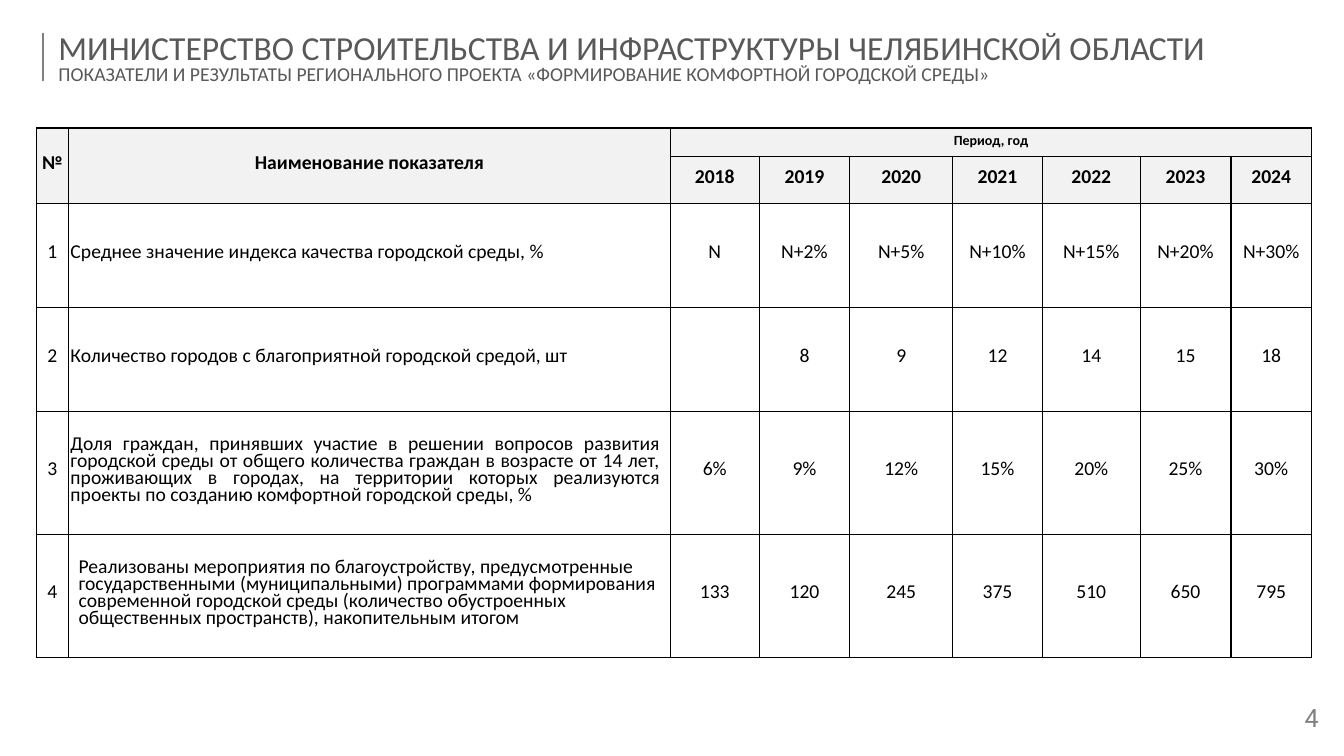
from lxml import etree
from pptx import Presentation
from pptx.dml.color import RGBColor
from pptx.enum.shapes import MSO_CONNECTOR
from pptx.enum.text import MSO_ANCHOR, MSO_AUTO_SIZE, PP_ALIGN
from pptx.oxml.ns import qn
from pptx.util import Inches, Pt

HEAD = [
    ("МИНИСТЕРСТВО СТРОИТЕЛЬСТВА И ИНФРАСТРУКТУРЫ ЧЕЛЯБИНСКОЙ ОБЛАСТИ", 24),
    ("ПОКАЗАТЕЛИ И РЕЗУЛЬТАТЫ РЕГИОНАЛЬНОГО ПРОЕКТА "
     "«ФОРМИРОВАНИЕ КОМФОРТНОЙ ГОРОДСКОЙ СРЕДЫ»", 14),
]
ROWS = [
    ["№", "Наименование показателя", "Период, год"] + [""] * 6,
    ["", "", "2018", "2019", "2020", "2021", "2022", "2023", "2024"],
    ["1", "Среднее значение индекса качества городской среды, %",
     "N", "N+2%", "N+5%", "N+10%", "N+15%", "N+20%", "N+30%"],
    ["2", "Количество городов с благоприятной городской средой, шт",
     "", "8", "9", "12", "14", "15", "18"],
    ["3", "Доля граждан, принявших участие в решении вопросов развития "
     "городской среды от общего количества граждан в возрасте от 14 лет, "
     "проживающих в городах, на территории которых реализуются проекты "
     "по созданию комфортной городской среды, %",
     "6%", "9%", "12%", "15%", "20%", "25%", "30%"],
    ["4", "Реализованы мероприятия по благоустройству, предусмотренные "
     "государственными (муниципальными) программами формирования "
     "современной городской среды (количество обустроенных "
     "общественных пространств), накопительным итогом",
     "133", "120", "245", "375", "510", "650", "795"],
]
WIDTHS = [0.32, 5.97, 0.88, 0.9, 1.02, 0.89, 0.97, 0.9, 0.8]
HEIGHTS = [0.28, 0.47, 1.03, 1.03, 1.22, 1.22]
SPANS = [((0, 0), (1, 0)), ((0, 1), (1, 1)), ((0, 2), (0, 8))]
PAGE = "4"

BLACK = RGBColor(0x00, 0x00, 0x00)
DARK = RGBColor(0x59, 0x59, 0x59)
GREY = RGBColor(0x80, 0x80, 0x80)
PALE = RGBColor(0xF2, 0xF2, 0xF2)
FONT = "Calibri"
LEFT, CENTER, JUST = PP_ALIGN.LEFT, PP_ALIGN.CENTER, PP_ALIGN.JUSTIFY
TOP, MIDDLE = MSO_ANCHOR.TOP, MSO_ANCHOR.MIDDLE
FIXED = MSO_AUTO_SIZE.NONE
STRAIGHT = MSO_CONNECTOR.STRAIGHT


def write(para, text, size, color, font=FONT, bold=False):
    """Add one formatted run to a paragraph."""
    run = para.add_run()
    run.text = text
    run.font.size = Pt(size)
    run.font.name = font
    run.font.bold = bold
    run.font.color.rgb = color


def frame(cell):
    """Draw a thin black border on all sides of a cell."""
    props = cell._tc.get_or_add_tcPr()
    for side in ("a:lnL", "a:lnR", "a:lnT", "a:lnB"):
        line = etree.SubElement(props, qn(side), w=str(Pt(1)))
        fill = etree.SubElement(line, qn("a:solidFill"))
        etree.SubElement(fill, qn("a:srgbClr"), val=str(BLACK))


def add_title(slide):
    """Fill the title with its two lines and draw the bar beside it."""
    title = slide.shapes.title
    title.left, title.top = Inches(0.48), Inches(0.26)
    title.width, title.height = Inches(12.7), Inches(0.67)
    box = title.text_frame
    box.auto_size, box.word_wrap = FIXED, True
    box.vertical_anchor = MIDDLE
    for i, (text, size) in enumerate(HEAD):
        para = box.add_paragraph() if i else box.paragraphs[0]
        para.alignment, para.line_spacing = LEFT, 0.8
        para.space_before = Pt(0)
        write(para, text, size, DARK)
    bar = slide.shapes.add_connector(
        STRAIGHT, Inches(0.43), Inches(0.33), Inches(0.43), Inches(0.8))
    bar.line.color.rgb = GREY
    bar.line.width = Pt(1.5)
    etree.SubElement(bar._element.spPr, qn("a:effectLst"))


def fill_cell(cell, text, row, col):
    """Format one cell by its place in the table and add its text."""
    head = row < 2
    name = col == 1 and not head
    last = row == len(ROWS) - 1
    frame(cell)
    if head:
        cell.fill.solid()
        cell.fill.fore_color.rgb = PALE
    else:
        cell.fill.background()
    cell.margin_left = Inches(0.1 if name and last else 0.02)
    cell.margin_right = Inches(0.1 if name else 0.02)
    cell.margin_top = cell.margin_bottom = Inches(0.04)
    period = row == 0 and col > 1
    cell.vertical_anchor = TOP if period else MIDDLE
    para = cell.text_frame.paragraphs[0]
    para.line_spacing = Pt(12)
    para.alignment = CENTER
    if name:
        para.alignment = LEFT if last else JUST
    if text:
        write(para, text, 10 if period else 14, BLACK, bold=head)


def add_grid(slide):
    """Build the table of targets by year."""
    grid = slide.shapes.add_table(
        len(ROWS), len(WIDTHS), Inches(0.36), Inches(1.27),
        Inches(sum(WIDTHS)), Inches(sum(HEIGHTS))).table
    grid.first_row = grid.horz_banding = False
    for col, width in zip(grid.columns, WIDTHS):
        col.width = Inches(width)
    for row, height in zip(grid.rows, HEIGHTS):
        row.height = Inches(height)
    for start, end in SPANS:
        grid.cell(*start).merge(grid.cell(*end))
    for r, row in enumerate(ROWS):
        for c, text in enumerate(row):
            fill_cell(grid.cell(r, c), text, r, c)


def add_page(slide):
    """Put the page number in the lower right corner."""
    box = slide.shapes.add_textbox(
        Inches(12.69), Inches(6.9), Inches(0.64), Inches(0.5)).text_frame
    box.word_wrap, box.vertical_anchor = True, MIDDLE
    para = box.paragraphs[0]
    para.alignment, para.line_spacing = CENTER, 0.8
    write(para, PAGE, 18, GREY, "Roboto")


def main():
    """Build the slide and save it."""
    deck = Presentation()
    deck.slide_width, deck.slide_height = Inches(13.33), Inches(7.5)
    slide = deck.slides.add_slide(deck.slide_layouts[5])
    add_title(slide)
    add_grid(slide)
    add_page(slide)
    deck.save("out.pptx")


if __name__ == "__main__":
    main()
